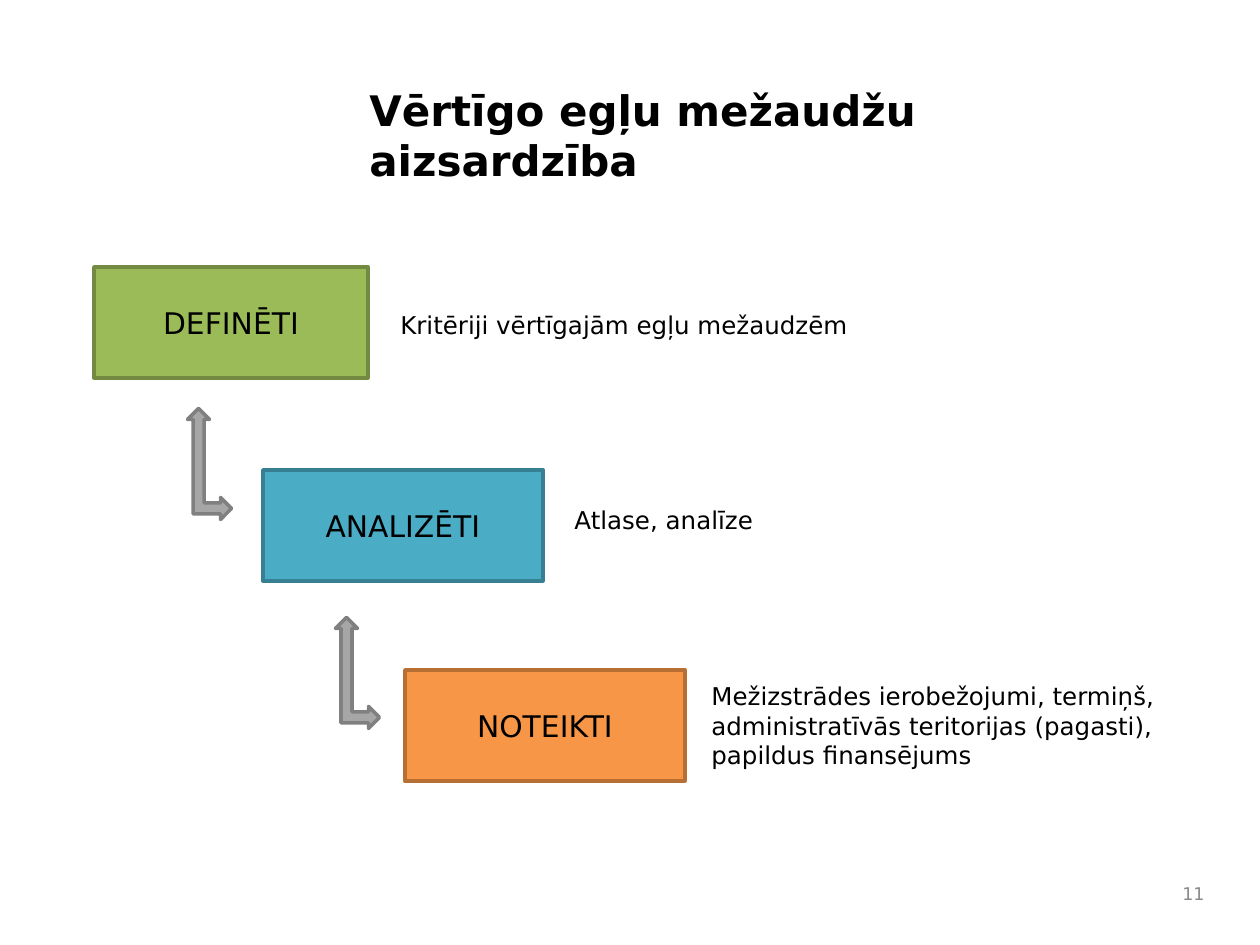
import pptx
import pptx.util
import pptx.dml.color
import pptx.enum.shapes
import pptx.enum.text

SHAPE = pptx.enum.shapes.MSO_SHAPE
ALIGN = pptx.enum.text.PP_ALIGN
ANCHOR = pptx.enum.text.MSO_ANCHOR

PX = 914400 // 126
FONT = "DejaVu Sans"
COLORS = {
    "text": "000000", "number": "898989",
    "green": "9BBB59", "green_line": "738A42",
    "blue": "4BACC6", "blue_line": "377F92",
    "orange": "F79646", "orange_line": "B76F34",
    "arrow": "A6A6A6", "arrow_line": "808080",
}
TITLE = ("Vērtīgo egļu mežaudžu aizsardzība", (357, 78, 840, 142))
NUMBER = ("11", (1139, 872, 78, 42))
STEPS = [
    ("DEFINĒTI", "green", (94, 267, 274, 111),
     "Kritēriji vērtīgajām egļu mežaudzēm", (388, 304, 692, 43)),
    ("ANALIZĒTI", "blue", (263, 470, 280, 111),
     "Atlase, analīze", (562, 499, 562, 43)),
    ("NOTEIKTI", "orange", (405, 670, 280, 111),
     "Mežizstrādes ierobežojumi, termiņš, administratīvās teritorijas "
     "(pagasti), papildus finansējums", (699, 675, 542, 102)),
]
ARROWS = [(154, 442, 111, 44), (302, 651, 111, 44)]


def rgb(name):
    return pptx.dml.color.RGBColor.from_string(COLORS[name])


def emu(box):
    return [v * PX for v in box]


def write(sp, text, size, color="text", bold=False, align=ALIGN.LEFT, anchor=ANCHOR.TOP):
    tf = sp.text_frame
    tf.word_wrap = True
    tf.vertical_anchor = anchor
    tf.text = text
    p = tf.paragraphs[0]
    p.alignment = align
    f = p.runs[0].font
    f.name, f.size, f.bold = FONT, pptx.util.Pt(size), bold
    f.color.rgb = rgb(color)


def add_text(s, text, box, size, **style):
    write(s.shapes.add_textbox(*emu(box)), text, size, **style)


def add_shape(s, kind, box, color):
    sp = s.shapes.add_shape(kind, *emu(box))
    sp.shadow.inherit = False
    sp.fill.solid()
    sp.fill.fore_color.rgb = rgb(color)
    sp.line.color.rgb = rgb(color + "_line")
    sp.line.width = pptx.util.Pt(2)
    return sp


def main():
    prs = pptx.Presentation()
    prs.slide_width, prs.slide_height = emu((1260, 945))
    s = prs.slides.add_slide(prs.slide_layouts[6])
    add_text(s, *TITLE, 24, bold=True)
    add_text(s, *NUMBER, 10, color="number", align=ALIGN.RIGHT, anchor=ANCHOR.MIDDLE)
    for name, color, box, note, note_box in STEPS:
        sp = add_shape(s, SHAPE.RECTANGLE, box, color)
        write(sp, name, 17, align=ALIGN.CENTER, anchor=ANCHOR.MIDDLE)
        add_text(s, note, note_box, 14)
    for box in ARROWS:
        add_shape(s, SHAPE.LEFT_UP_ARROW, box, "arrow").rotation = 90
    prs.save("out.pptx")


if __name__ == "__main__":
    main()
